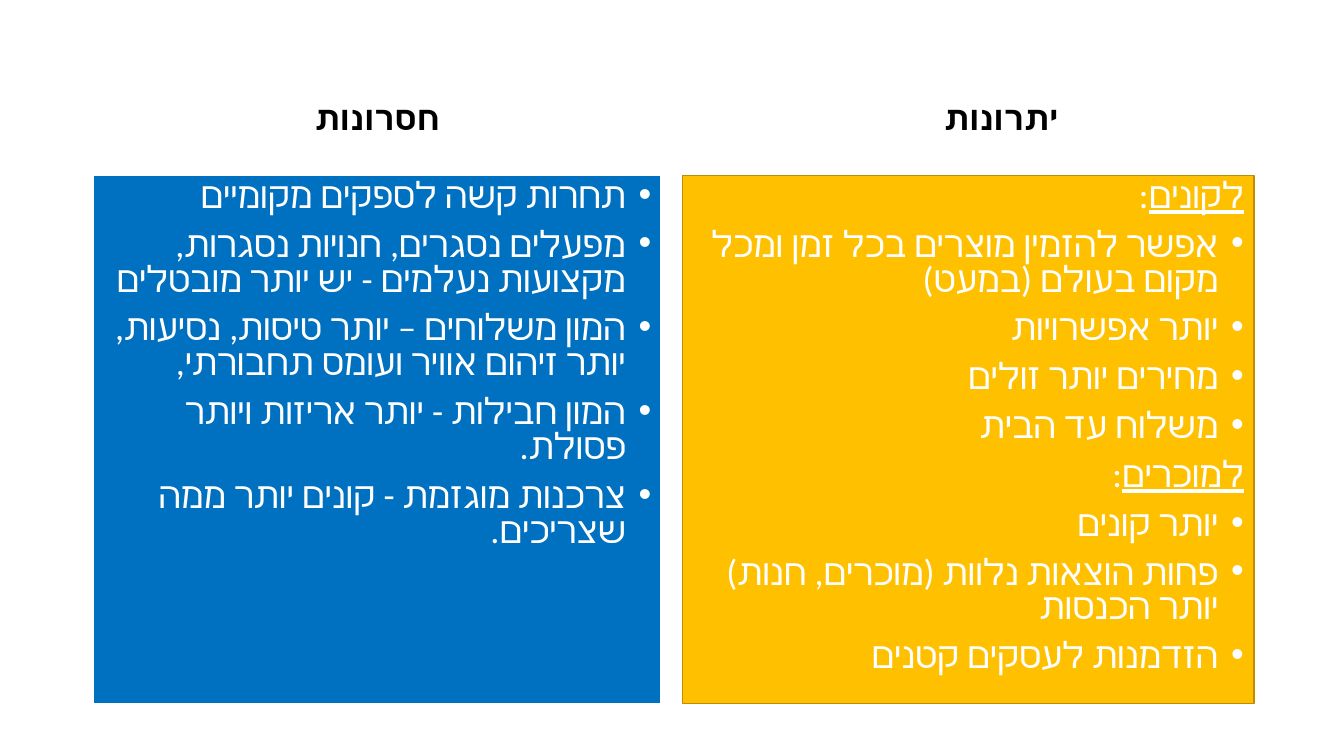
from dataclasses import dataclass
from pptx import Presentation
from pptx.dml.color import RGBColor
from pptx.enum.text import MSO_ANCHOR, MSO_AUTO_SIZE, PP_ALIGN
from pptx.oxml.ns import qn
from pptx.util import Cm, Pt
from lxml.etree import SubElement


@dataclass(frozen=True)
class Theme:
    font: str = "Calibri"
    black: RGBColor = RGBColor(0, 0, 0)
    white: RGBColor = RGBColor(255, 255, 255)
    blue: RGBColor = RGBColor(0x00, 0x70, 0xC0)
    gold: RGBColor = RGBColor(0xFF, 0xC0, 0x00)
    brown: RGBColor = RGBColor(0xBD, 0x8E, 0x00)
    head: float = 24
    body: float = 25.9


THEME = Theme()
INDENT = Cm(0.64)

CONS = [
    "תחרות קשה לספקים מקומיים",
    "מפעלים נסגרים, חנויות נסגרות, מקצועות נעלמים - יש יותר מובטלים",
    "המון משלוחים – יותר טיסות, נסיעות, יותר זיהום אוויר ועומס תחבורתי,",
    "המון חבילות - יותר אריזות ויותר פסולת.",
    "צרכנות מוגזמת - קונים יותר ממה שצריכים.",
]
# A line that ends in a colon is a group heading
PROS = [
    "לקונים:",
    "אפשר להזמין מוצרים בכל זמן ומכל מקום בעולם (במעט)",
    "יותר אפשרויות",
    "מחירים יותר זולים",
    "משלוח עד הבית",
    "למוכרים:",
    "יותר קונים",
    "פחות הוצאות נלוות (מוכרים, חנות) יותר הכנסות",
    "הזדמנות לעסקים קטנים",
]


def place(shape, box, anchor):
    shape.left, shape.top, shape.width, shape.height = map(Cm, box)
    frame = shape.text_frame
    frame.word_wrap = True
    frame.auto_size = MSO_AUTO_SIZE.NONE
    frame.vertical_anchor = anchor
    return frame


def add_run(para, text, size, color, bold=False, under=False):
    run = para.add_run()
    run.text = text
    font = run.font
    font.name, font.size = THEME.font, Pt(size)
    font.bold, font.underline = bold, under
    font.color.rgb = color
    # Hebrew takes its typeface from the complex script slot
    SubElement(run._r.get_or_add_rPr(), qn("a:cs"), typeface=THEME.font)


def set_para(para, align, spacing, bullet=False):
    para.alignment = align
    para.line_spacing = spacing
    para.space_before, para.space_after = Pt(10), Pt(0)
    props = para._p.get_or_add_pPr()
    props.set("rtl", "1")
    props.set("defTabSz", str(Cm(2.54)))
    props.set("marL", str(INDENT if bullet else 0))
    props.set("indent", str(-INDENT if bullet else 0))
    if bullet:
        SubElement(props, qn("a:buFont"), typeface="Arial")
        SubElement(props, qn("a:buChar"), char="•")
    else:
        SubElement(props, qn("a:buNone"))


def fill_head(shape, box, text):
    para = place(shape, box, MSO_ANCHOR.BOTTOM).paragraphs[0]
    set_para(para, PP_ALIGN.CENTER, 0.9)
    add_run(para, text, THEME.head, THEME.black, bold=True)


def fill_list(shape, box, lines, fill, edge, width):
    frame = place(shape, box, MSO_ANCHOR.TOP)
    shape.fill.solid()
    shape.fill.fore_color.rgb = fill
    shape.line.color.rgb = edge
    shape.line.width = Pt(width)
    for i, text in enumerate(lines):
        para = frame.add_paragraph() if i else frame.paragraphs[0]
        group = text.endswith(":")
        set_para(para, PP_ALIGN.RIGHT, 0.8, bullet=not group)
        if group:
            add_run(para, text[:-1], THEME.body, THEME.white, under=True)
            add_run(para, ":", THEME.body, THEME.white)
        else:
            add_run(para, text, THEME.body, THEME.white)


def main():
    deck = Presentation()
    deck.slide_width, deck.slide_height = Cm(33.87), Cm(19.05)
    slide = deck.slides.add_slide(deck.slide_layouts[4])
    title = slide.shapes.title.element
    title.getparent().remove(title)
    holders = slide.placeholders
    top, tall = 1.32, 2.29
    low, deep = 4.42, 13.31

    # Drawbacks on the left
    fill_head(holders[1], (2.34, top, 14.33, tall), "חסרונות")
    fill_list(holders[2], (2.34, low, 14.33, deep), CONS,
              THEME.blue, THEME.white, 1.5)

    # Benefits on the right; the tab shifts the heading sideways
    fill_head(holders[3], (16.94, top, 14.4, tall), "יתרונות\t")
    fill_list(holders[4], (17.2, low, 14.4, deep), PROS,
              THEME.gold, THEME.brown, 1)
    deck.save("out.pptx")


if __name__ == "__main__":
    main()
